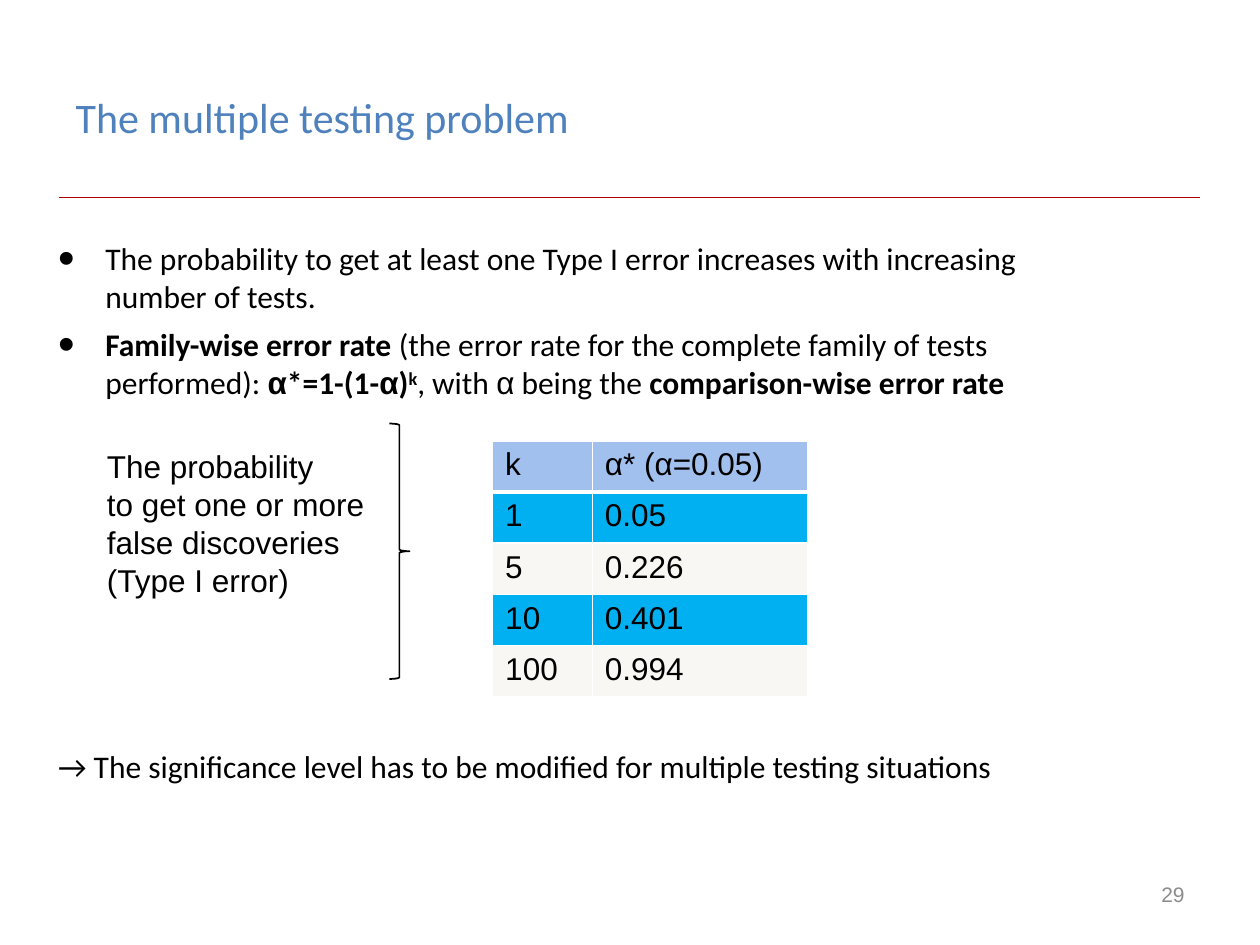
from lxml.etree import SubElement as Sub
from pptx import Presentation
from pptx.dml.color import RGBColor as RGB
from pptx.enum.shapes import MSO_CONNECTOR as Link, MSO_SHAPE as Form
from pptx.enum.text import MSO_ANCHOR as Anchor, MSO_AUTO_SIZE as Auto, PP_ALIGN as Align
from pptx.oxml.ns import qn
from pptx.util import Pt

BLACK = RGB(0, 0, 0)
WHITE = RGB(255, 255, 255)
BLUE = RGB(0x4F, 0x81, 0xBD)
GREY = RGB(0x8C, 0x8C, 0x8C)
RED = RGB(0xAC, 0, 0)
HEAD = RGB(0xA1, 0xC0, 0xEE)
BANDS = RGB(0, 0xB0, 0xF0), RGB(0xF8, 0xF7, 0xF3)

POINTS = [
    [("The probability to get at least one Type I error increases "
      "with increasing number of tests.", "")],
    [("Family-wise error rate ", "b"),
     ("(the error rate for the complete family of tests performed): ", ""),
     ("α", "ba"), ("*=1-(1-", "b"), ("α", "ba"), (")", "b"), ("k", "bs"),
     (", with ", ""), ("α", "a"), (" being the ", ""),
     ("comparison-wise error rate", "b")],
]
CLOSE = [("→ The significance level has to be modified for "
          "multiple testing situations", "")]
RATES = [("k", "α* (α=0.05)"), ("1", "0.05"), ("5", "0.226"),
         ("10", "0.401"), ("100", "0.994")]
NOTE = ["The probability", "to get one or more",
        "false discoveries", "(Type I error)"]


def place(shape, box):
    shape.left, shape.top, shape.width, shape.height = map(Pt, box)


def style(para, size=18, name="Arial", color=BLACK):
    font = para.font
    font.size, font.name, font.bold = Pt(size), name, False
    font.color.rgb = color


def add_title(slide, box):
    title = slide.shapes.title
    place(title, box)
    frame = title.text_frame
    frame.text = "The multiple testing problem"
    frame.vertical_anchor = Anchor.MIDDLE
    para = frame.paragraphs[0]
    para.alignment = Align.LEFT
    style(para, 24, "Calibri", BLUE)


def add_rule(slide, box):
    left, top, width, _ = box
    rule = slide.shapes.add_connector(
        Link.STRAIGHT, Pt(left), Pt(top), Pt(left + width), Pt(top))
    rule.line.color.rgb = RED
    rule.line.width = Pt(0.25)
    Sub(rule._element.spPr, qn("a:effectLst"))


def add_para(para, runs, gap, hang):
    props = para._p.get_or_add_pPr()
    props.set("marL", str(Pt(hang)))
    props.set("indent", str(Pt(-hang)))
    para.space_before = Pt(gap)
    if hang:
        Sub(props, qn("a:buSzPct"), val="150000")
        Sub(props, qn("a:buChar"), char="•")
    else:
        Sub(props, qn("a:buNone"))
    style(para, 18, "Calibri")
    for text, marks in runs:
        run = para.add_run()
        run.text = text
        if "b" in marks:
            run.font.bold = True
        if "a" in marks:
            run.font.name = "Arial"
        if "s" in marks:
            run._r.get_or_add_rPr().set("baseline", "30000")


def add_body(slide, box):
    body = slide.placeholders[1]
    place(body, box)
    frame = body.text_frame
    frame.auto_size = Auto.NONE
    add_para(frame.paragraphs[0], POINTS[0], 0, 27)
    add_para(frame.add_paragraph(), POINTS[1], 6, 27)
    add_para(frame.add_paragraph(), CLOSE, 198, 0)


def add_edges(cell, base):
    props = cell._tc.get_or_add_tcPr()
    for side, width in zip("LRTB", (1, 1, 1, base)):
        edge = Sub(props, qn("a:ln" + side), w=str(Pt(width)))
        fill = Sub(edge, qn("a:solidFill"))
        Sub(fill, qn("a:srgbClr"), val=str(WHITE))


def add_rates(slide, box):
    table = slide.shapes.add_table(len(RATES), 2, *map(Pt, box)).table
    table.first_row = table.horz_banding = False
    for col, width in zip(table.columns, (57, box[2] - 57)):
        col.width = Pt(width)
    for i, row in enumerate(RATES):
        for j, text in enumerate(row):
            cell = table.cell(i, j)
            add_edges(cell, 1 if i else 3)
            cell.fill.solid()
            cell.fill.fore_color.rgb = BANDS[(i - 1) % 2] if i else HEAD
            cell.text = text
            style(cell.text_frame.paragraphs[0])


def add_brace(slide, box):
    brace = slide.shapes.add_shape(Form.RIGHT_BRACE, *map(Pt, box))
    brace.shadow.inherit = False
    brace.fill.background()
    brace.line.color.rgb = BLACK
    brace.line.width = Pt(1)


def add_note(slide, box):
    frame = slide.shapes.add_textbox(*map(Pt, box)).text_frame
    frame.word_wrap = False
    frame.text = "\n".join(NOTE)
    for para in frame.paragraphs:
        style(para)


def add_number(slide, box):
    frame = slide.shapes.add_textbox(*map(Pt, box)).text_frame
    frame.word_wrap = True
    frame.vertical_anchor = Anchor.MIDDLE
    frame.text = "29"
    para = frame.paragraphs[0]
    para.alignment = Align.RIGHT
    style(para, 12, color=GREY)


def main():
    deck = Presentation()
    deck.slide_width, deck.slide_height = Pt(720), Pt(540)
    slide = deck.slides.add_slide(deck.slide_layouts[1])
    add_rule(slide, (34, 112.5, 652, 0))
    add_number(slide, (516, 492, 168, 37.5))
    add_title(slide, (36, 21.5, 487.5, 90))
    add_body(slide, (26, 133, 623.5, 385))
    add_rates(slide, (281.5, 252, 180, 146))
    add_brace(slide, (222.5, 242, 11.5, 146))
    add_note(slide, (54, 252, 168, 94.5))
    deck.save("out.pptx")


if __name__ == "__main__":
    main()
